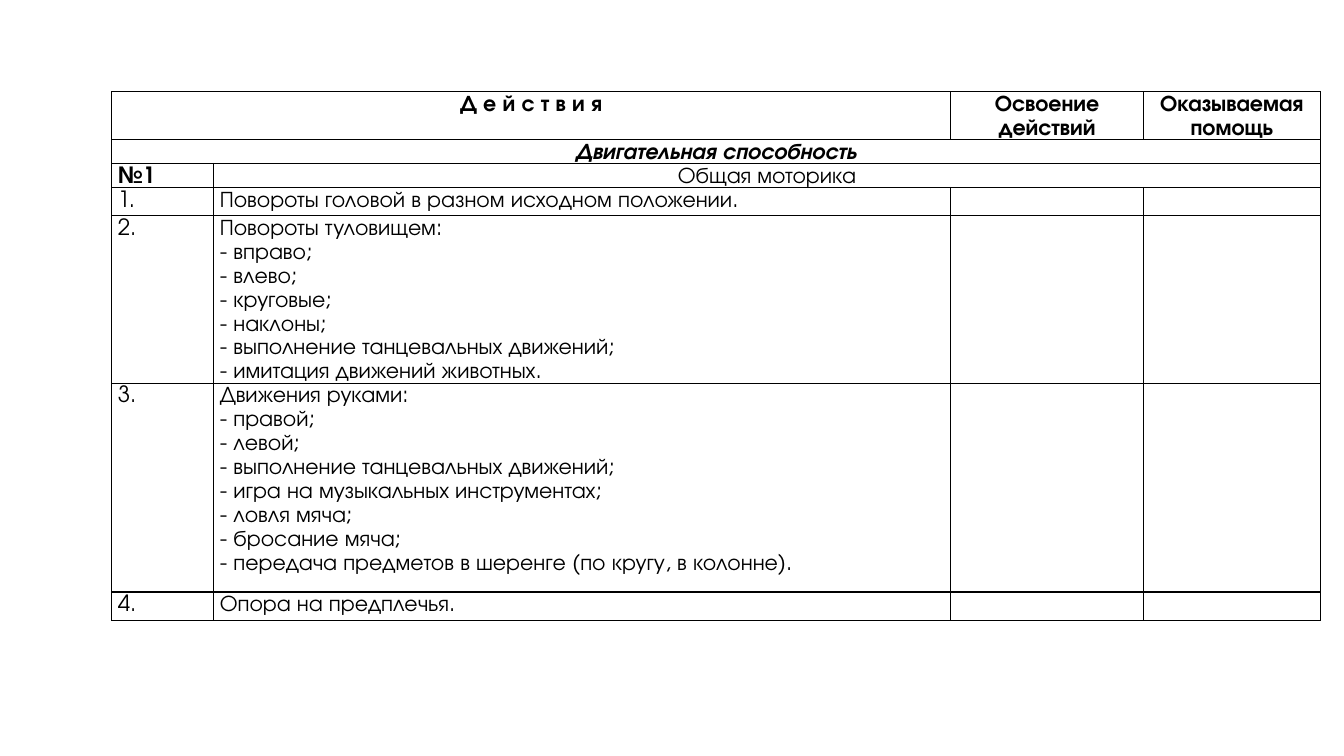
"""Build a slide with a table of motor-skill actions."""
from lxml.etree import SubElement
from pptx import Presentation
from pptx.dml.color import RGBColor
from pptx.enum.text import PP_ALIGN as Align
from pptx.oxml.ns import qn
from pptx.util import Cm, Pt

FONT = "TeX Gyre Adventor"
BLACK = RGBColor(0, 0, 0)
COLUMNS = (2.57, 18.57, 4.86, 4.45)
ROWS = (1.21, 0.6, 0.6, 0.66, 4.2, 5.26, 0.6)
HEADING = {"align": Align.CENTER, "bold": True}

HEADER_CELLS = [
    (0, 0, 2, "Д е й с т в и я", HEADING),
    (0, 2, 1, "Освоение действий", HEADING),
    (0, 3, 1, "Оказываемая помощь", HEADING),
    (1, 0, 4, "Двигательная способность", {**HEADING, "italic": True}),
    (2, 0, 1, "№1", {"bold": True}),
    (2, 1, 3, "Общая моторика", {"align": Align.CENTER}),
]
ACTIONS = [
    ["Повороты головой в разном исходном положении."],
    ["Повороты туловищем:", "- вправо;", "- влево;", "- круговые;", "- наклоны;",
     "- выполнение танцевальных движений;", "- имитация движений животных."],
    ["Движения руками:", "- правой;", "- левой;",
     "- выполнение танцевальных движений;",
     "- игра на музыкальных инструментах;", "- ловля мяча;", "- бросание мяча;",
     "- передача предметов в шеренге (по кругу, в колонне)."],
    ["Опора на предплечья."],
]


def write(cell, text, align=Align.JUSTIFY, bold=False, italic=False):
    for index, line in enumerate(text.split("\n")):
        frame = cell.text_frame
        para = frame.add_paragraph() if index else frame.paragraphs[0]
        para.alignment = align
        para.line_spacing = 1.15
        span = para.add_run()
        span.text = line
        span.font.name = FONT
        span.font.size = Pt(16)
        span.font.bold = bold
        span.font.italic = italic
        span.font.color.rgb = BLACK


def style_cell(cell):
    cell.margin_left = cell.margin_right = Cm(0.15)
    cell.margin_top = cell.margin_bottom = 0
    properties = cell._tc.get_or_add_tcPr()
    for side in ("a:lnL", "a:lnR", "a:lnT", "a:lnB"):
        border = SubElement(properties, qn(side), w=str(Pt(1)))
        fill = SubElement(border, qn("a:solidFill"))
        SubElement(fill, qn("a:srgbClr"), val=str(BLACK))
    cell.fill.background()


def main():
    deck = Presentation()
    deck.slide_width, deck.slide_height = Cm(33.87), Cm(19.05)
    page = deck.slides.add_slide(deck.slide_layouts[6])
    table = page.shapes.add_table(
        len(ROWS), len(COLUMNS), Cm(2.82), Cm(2.31),
        Cm(sum(COLUMNS)), Cm(sum(ROWS))).table
    table.first_row = table.horz_banding = False
    for column, width in zip(table.columns, COLUMNS):
        column.width = Cm(width)
    for row, height in zip(table.rows, ROWS):
        row.height = Cm(height)
    for cell in table.iter_cells():
        style_cell(cell)
    for row, column, width, text, style in HEADER_CELLS:
        cell = table.cell(row, column)
        if width > 1:
            cell.merge(table.cell(row, column + width - 1))
        write(cell, text, **style)
    for number, lines in enumerate(ACTIONS, 1):
        texts = (f"{number}.", "\n".join(lines), "", "")
        for column, text in enumerate(texts):
            write(table.cell(number + 2, column), text)
    deck.save("out.pptx")


if __name__ == "__main__":
    main()
